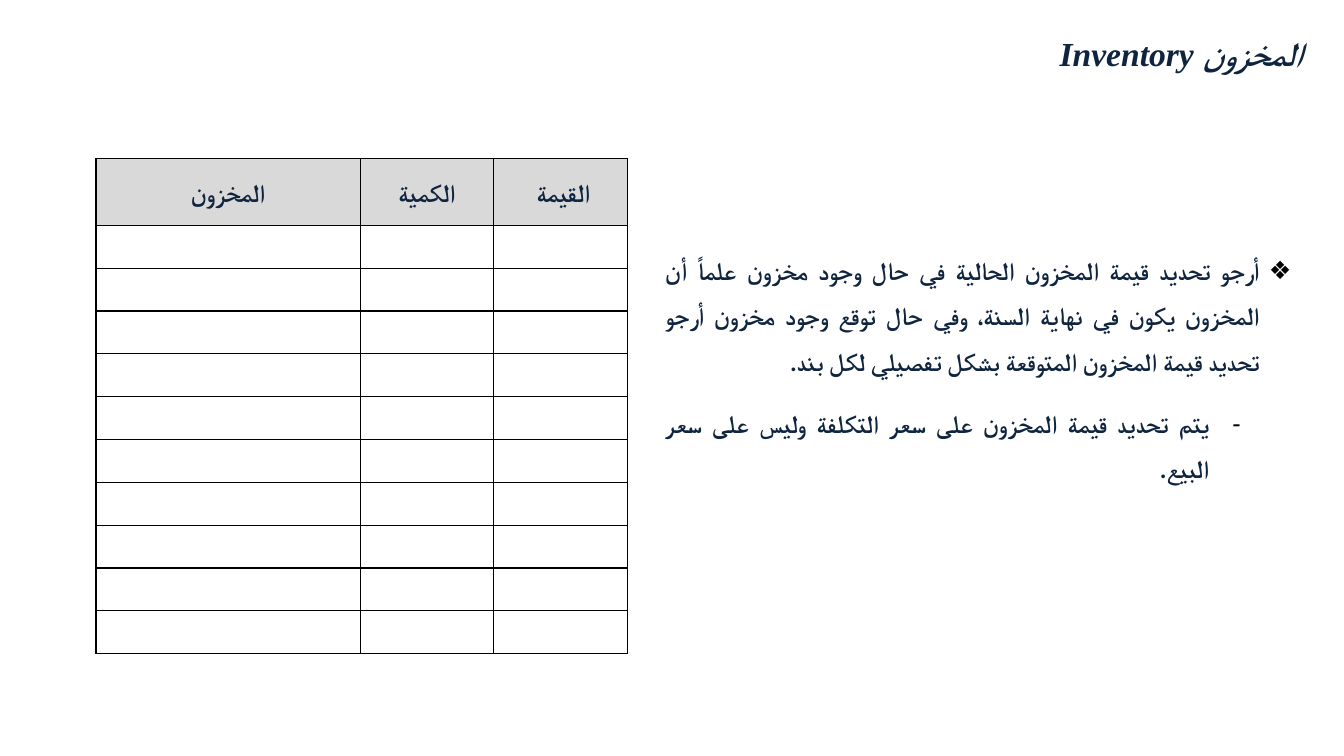
from lxml import etree
from pptx import Presentation
from pptx import util as u
from pptx.dml import color
from pptx.enum import text
from pptx.oxml import ns

NAVY = "0F243E"
BLACK = "000000"
GREY = "D9D9D9"


def rgb(code):
    """Turn a hex string into a colour."""
    return color.RGBColor.from_string(code)


def node(parent, tag, **attrs):
    """Append a drawing element to its parent."""
    return etree.SubElement(parent, ns.qn("a:" + tag), attrs)


def write(par, words, size=18, face="Calibri", italic=False,
          align=text.PP_ALIGN.JUSTIFY, lines=1.0, before=0):
    """Add a bold right-to-left run to a paragraph."""
    par.alignment = align
    par.line_spacing = lines
    par.space_before = u.Pt(before)
    par._p.get_or_add_pPr().set("rtl", "1")
    run = par.add_run()
    run.text = words
    font = run.font
    font.size = u.Pt(size)
    font.bold = True
    font.italic = italic
    font.color.rgb = rgb(NAVY)
    font.name = face
    node(run._r.get_or_add_rPr(), "cs", typeface=face)


def bullet(par, mark, left):
    """Give a paragraph a hanging black bullet."""
    props = par._p.get_or_add_pPr()
    props.set("marL", str(u.Pt(left)))
    props.set("indent", str(u.Pt(-22.5)))
    node(node(props, "buClr"), "srgbClr", val=BLACK)
    node(props, "buFont", typeface="Arial")
    node(props, "buChar", char=mark)


def place(shape, left, top, width, height):
    """Move a placeholder and return its top-anchored frame."""
    shape.left, shape.top = u.Pt(left), u.Pt(top)
    shape.width, shape.height = u.Pt(width), u.Pt(height)
    frame = shape.text_frame
    frame.word_wrap = True
    frame.auto_size = text.MSO_AUTO_SIZE.NONE
    frame.vertical_anchor = text.MSO_ANCHOR.TOP
    return frame


def border(cell):
    """Draw thin black lines on all four sides of a cell."""
    props = cell._tc.get_or_add_tcPr()
    for side in ("lnL", "lnR", "lnT", "lnB"):
        line = node(props, side, w=str(u.Pt(1)))
        node(node(line, "solidFill"), "srgbClr", val=BLACK)


def grid(slide, heads, widths, count):
    """Add the stock table with a grey head and empty rows."""
    frame = slide.shapes.add_table(count + 1, len(heads), u.Pt(68.5), u.Pt(113),
                                   u.Pt(sum(widths)), u.Pt(354))
    table = frame.table
    table.first_row = table.horz_banding = False
    for col, width in zip(table.columns, widths):
        col.width = u.Pt(width)
    for index, row in enumerate(table.rows):
        row.height = u.Pt(30.6 if index else 48)
        for cell in row.cells:
            cell.margin_left = cell.margin_right = u.Pt(5)
            cell.margin_top = cell.margin_bottom = 0
            cell.vertical_anchor = text.MSO_ANCHOR.MIDDLE
            border(cell)
            cell.fill.background()
    for cell, head in zip(table.rows[0].cells, heads):
        cell.fill.solid()
        cell.fill.fore_color.rgb = rgb(GREY)
        write(cell.text_frame.paragraphs[0], head, face="Times New Roman",
              align=text.PP_ALIGN.CENTER, lines=1.15)


def main():
    """Build the inventory slide."""
    deck = Presentation()
    deck.slide_width, deck.slide_height = u.Pt(960), u.Pt(540)
    slide = deck.slides.add_slide(deck.slide_layouts[1])

    title = place(slide.shapes.title, 252, 20, 685.5, 36).paragraphs[0]
    write(title, "المخزون ", size=24, face="Arial", italic=True)
    write(title, "Inventory", size=24, face="Times New Roman", italic=True)

    body = place(slide.placeholders[1], 468, 168, 461.5, 183)
    note = body.paragraphs[0]
    write(note, "أرجو تحديد قيمة المخزون الحالية في حال وجود مخزون علماً أن "
          "المخزون يكون في نهاية السنة، وفي حال توقع وجود مخزون أرجو "
          "تحديد قيمة المخزون المتوقعة بشكل تفصيلي لكل بند.", lines=1.5)
    bullet(note, "❖", 22.5)
    rule = body.add_paragraph()
    rule.level = 1
    write(rule, "يتم تحديد قيمة المخزون على سعر التكلفة وليس على سعر البيع.",
          lines=1.5, before=12)
    bullet(rule, "-", 58.5)

    grid(slide, ["المخزون", "الكمية", "القيمة "], [189, 95, 95.5], 10)
    deck.save("out.pptx")


if __name__ == "__main__":
    main()
